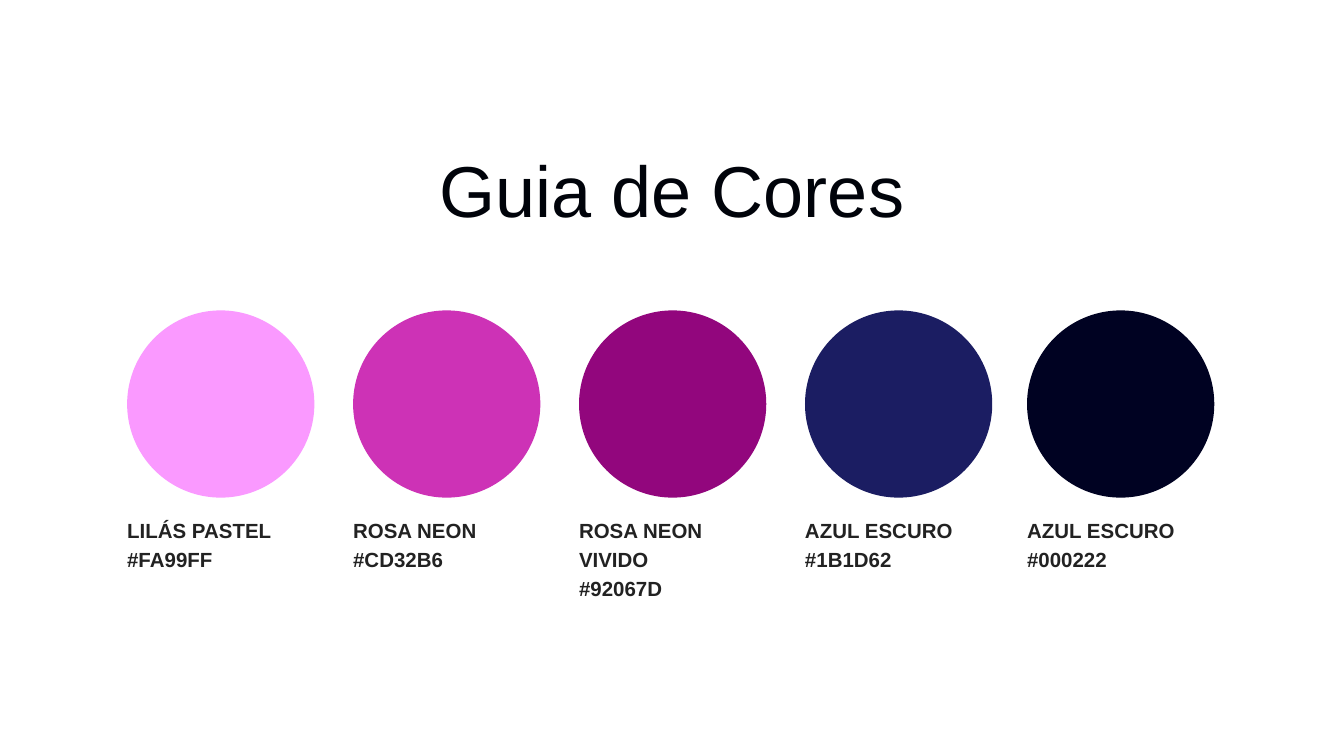
from dataclasses import dataclass

from pptx import Presentation
from pptx.dml.color import RGBColor
from pptx.enum.shapes import MSO_SHAPE
from pptx.enum.text import MSO_ANCHOR, MSO_AUTO_SIZE, PP_ALIGN
from pptx.util import Pt

TITLE = "Guia de Cores"
SWATCHES = [
    ("LILÁS PASTEL", "FA99FF"),
    ("ROSA NEON", "CD32B6"),
    ("ROSA NEON VIVIDO", "92067D"),
    ("AZUL ESCURO", "1B1D62"),
    ("AZUL ESCURO", "000222"),
]


@dataclass(frozen=True)
class Theme:
    font: str = "Arial"
    background: str = "FFFFFF"
    title_color: str = "00030A"
    label_color: str = "222222"
    title_size: float = 77.2
    label_size: float = 21.9
    title_spacing: float = 1.4
    label_spacing: float = 1.18


THEME = Theme()
SLIDE_WIDTH, SLIDE_HEIGHT = 1440, 810
TITLE_BOX = (273.6, 118.8, 892.8, 103.7)
FIRST_LEFT, STEP = 136.2, 242.1
LAST_LEFT = 1100.4  # the last swatch sits slightly closer to its neighbour
CIRCLE_TOP, DIAMETER = 332.6, 200.6
LABEL_TOP, LABEL_WIDTH, LINE_HEIGHT = 550.8, 193, 25.2


def prepare_frame(frame):
    frame.margin_left = frame.margin_top = 0
    frame.margin_right = frame.margin_bottom = 0
    frame.word_wrap = True
    frame.auto_size = MSO_AUTO_SIZE.NONE
    frame.vertical_anchor = MSO_ANCHOR.TOP


def write(paragraph, text, size, color, spacing, alignment, bold=False):
    paragraph.alignment = alignment
    paragraph.line_spacing = spacing
    run = paragraph.add_run()
    run.text = text
    run.font.name = THEME.font
    run.font.size = Pt(size)
    run.font.bold = bold
    run.font.color.rgb = RGBColor.from_string(color)


def add_title(slide):
    title = slide.shapes.title
    title.left, title.top, title.width, title.height = map(Pt, TITLE_BOX)
    prepare_frame(title.text_frame)
    write(title.text_frame.paragraphs[0], TITLE, THEME.title_size,
          THEME.title_color, THEME.title_spacing, PP_ALIGN.CENTER)


def add_circle(slide, left, color):
    circle = slide.shapes.add_shape(
        MSO_SHAPE.OVAL, Pt(left), Pt(CIRCLE_TOP), Pt(DIAMETER), Pt(DIAMETER))
    circle.shadow.inherit = False
    circle.fill.solid()
    circle.fill.fore_color.rgb = RGBColor.from_string(color)
    circle.line.fill.background()


def add_label(slide, left, lines):
    label = slide.shapes.add_textbox(
        Pt(left), Pt(LABEL_TOP), Pt(LABEL_WIDTH), Pt(LINE_HEIGHT * len(lines)))
    frame = label.text_frame
    prepare_frame(frame)
    for index, line in enumerate(lines):
        paragraph = frame.add_paragraph() if index else frame.paragraphs[0]
        write(paragraph, line, THEME.label_size, THEME.label_color,
              THEME.label_spacing, PP_ALIGN.LEFT, bold=True)


def main():
    presentation = Presentation()
    presentation.slide_width = Pt(SLIDE_WIDTH)
    presentation.slide_height = Pt(SLIDE_HEIGHT)
    title_only = presentation.slide_layouts[5]
    slide = presentation.slides.add_slide(title_only)
    slide.background.fill.solid()
    slide.background.fill.fore_color.rgb = RGBColor.from_string(THEME.background)

    add_title(slide)
    lefts = [FIRST_LEFT + STEP * i for i in range(len(SWATCHES) - 1)] + [LAST_LEFT]
    for left, (name, color) in zip(lefts, SWATCHES):
        add_circle(slide, left, color)
        add_label(slide, left, (name, f"#{color}"))

    presentation.save("out.pptx")


if __name__ == "__main__":
    main()
